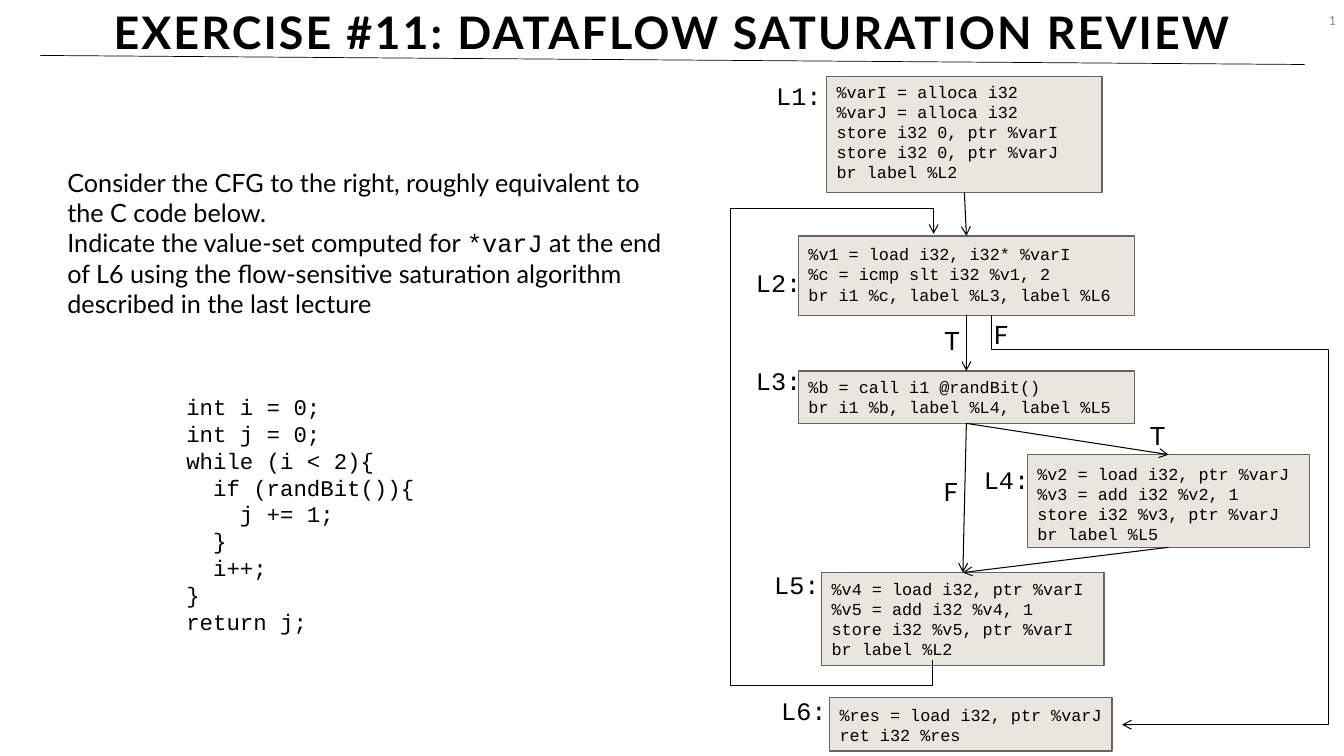
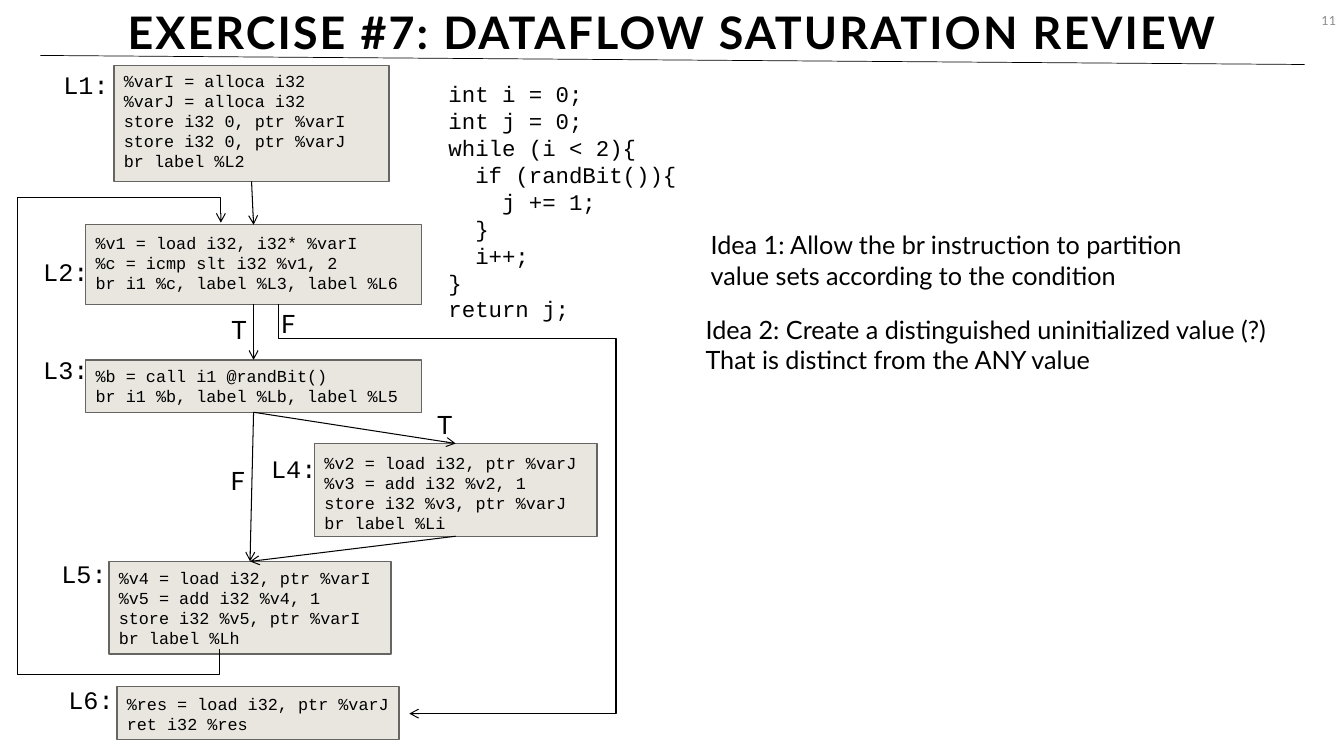
from dataclasses import dataclass

from lxml import etree
from pptx import Presentation
from pptx.dml.color import RGBColor
from pptx.enum.shapes import MSO_CONNECTOR, MSO_SHAPE
from pptx.enum.text import MSO_ANCHOR, MSO_AUTO_SIZE, PP_ALIGN
from pptx.oxml.ns import qn
from pptx.util import Inches, Pt

COLORS = {"ink": "000000", "number": "8C8C8C", "block": "E9E6DF", "edge": "666562"}
BODY, MONO = "Lato", "Courier New"
TOP, BOTTOM = 0, 2

C_CODE = [
    "int i = 0;",
    "int j = 0;",
    "while (i < 2){",
    "  if (randBit()){",
    "    j += 1;",
    "  }",
    "  i++;",
    "}",
    "return j;",
]


@dataclass(frozen=True)
class Block:
    """A basic block with its label; drop is the extra space above the code."""
    name: str
    left: float
    top: float
    width: float
    height: float
    label_left: float
    label_top: float
    drop: float
    code: tuple[str, ...]


@dataclass(frozen=True)
class Branch:
    """The T or F mark beside an edge."""
    text: str
    left: float
    top: float


@dataclass(frozen=True)
class Elbow:
    """A bent arrow; bends holds the levels it turns at: y, x, y, ..."""
    start: tuple[float, float]
    end: tuple[float, float]
    bends: tuple[float, ...]
    rotation: int


BLOCKS = [
    Block("L1", 8.2, 0.76, 2.73, 1.15, 7.6, 0.75, 0,
          ("%varI = alloca i32", "%varJ = alloca i32", "store i32 0, ptr %varI",
           "store i32 0, ptr %varJ", "br label %L2")),
    Block("L2", 7.92, 2.34, 3.33, 0.79, 7.4, 2.6, 0.03,
          ("%v1 = load i32, i32* %varI", "%c = icmp slt i32 %v1, 2",
           "br i1 %c, label %L3, label %L6")),
    Block("L3", 7.92, 3.68, 3.33, 0.52, 7.4, 3.58, 0.01,
          ("%b = call i1 @randBit()", "br i1 %b, label %{L3}, label %L5")),
    Block("L4", 10.19, 4.51, 2.8, 0.92, 9.66, 4.56, 0.04,
          ("%v2 = load i32, ptr %varJ", "%v3 = add i32 %v2, 1",
           "store i32 %v3, ptr %varJ", "br label %{L4}")),
    Block("L5", 8.15, 5.68, 2.8, 0.92, 7.58, 5.6, 0.01,
          ("%v4 = load i32, ptr %varI", "%v5 = add i32 %v4, 1",
           "store i32 %v5, ptr %varI", "br label %{L5}")),
    Block("L6", 8.23, 6.92, 2.8, 0.53, 7.65, 6.85, 0.02,
          ("%res = load i32, ptr %varJ", "ret i32 %res")),
]
EDGES = [("L1", "L2"), ("L2", "L3"), ("L3", "L5"), ("L3", "L4"), ("L4", "L5")]
ELBOWS = [
    Elbow((9.83, 3.13), (11.13, 7.19), (3.47, 13.18), 270),
    Elbow((9.25, 6.55), (9.26, 2.32), (6.8, 7.21, 2.07), 90),
]
BRANCHES = [Branch("F", 9.26, 4.68), Branch("T", 9.27, 3.18),
            Branch("T", 11.31, 4.12), Branch("F", 9.76, 3.12)]


def color(name: str) -> RGBColor:
    return RGBColor.from_string(COLORS[name])


# Text
def write(frame, paragraphs, *, size: float = 18, font: str = BODY, ink: str = "ink",
          bold: bool = False, align=PP_ALIGN.LEFT, anchor=MSO_ANCHOR.TOP,
          wrap: bool = True, auto_size=MSO_AUTO_SIZE.NONE,
          line_spacing: float | None = None, tracking: float = 0) -> None:
    """Fill a frame; a paragraph is a string or a list of (text, font) spans."""
    frame.word_wrap = wrap
    frame.auto_size = auto_size
    frame.vertical_anchor = anchor
    for index, content in enumerate(paragraphs):
        para = frame.add_paragraph() if index else frame.paragraphs[0]
        para.alignment = align
        if line_spacing:
            para.line_spacing = line_spacing
        spans = [(content, font)] if isinstance(content, str) else content
        for text, span_font in spans:
            span = para.add_run()
            span.text = text
            span.font.name = span_font
            span.font.size = Pt(size)
            span.font.bold = bold
            span.font.color.rgb = color(ink)
            if tracking:
                span._r.get_or_add_rPr().set("spc", str(round(tracking * 100)))


def add_text(page, left: float, top: float, width: float, height: float,
             paragraphs, **text_format) -> None:
    box = page.shapes.add_textbox(Inches(left), Inches(top), Inches(width), Inches(height))
    text_format.setdefault("auto_size", MSO_AUTO_SIZE.SHAPE_TO_FIT_TEXT)
    write(box.text_frame, paragraphs, **text_format)


# Lines
def add_line(page, start: tuple[float, float], end: tuple[float, float], *,
             kind=MSO_CONNECTOR.STRAIGHT, weight: float = 0.75, arrow: bool = True):
    line = page.shapes.add_connector(kind, *map(Inches, (*start, *end)))
    line.line.color.rgb = color("ink")
    line.line.width = Pt(weight)
    properties = line.element.spPr
    if arrow:
        etree.SubElement(properties.find(qn("a:ln")), qn("a:tailEnd"), type="arrow")
    etree.SubElement(properties, qn("a:effectLst"))
    return line


def add_elbow(page, elbow: Elbow, dx: float, dy: float) -> None:
    """Draw a bent arrow that leaves its start vertically."""
    (x0, y0), (x1, y1) = elbow.start, elbow.end
    line = add_line(page, (x0 + dx, y0 + dy), (x1 + dx, y1 + dy), kind=MSO_CONNECTOR.ELBOW)
    # The frame is given as it lies before the quarter turn
    width, height = abs(y1 - y0), abs(x1 - x0)
    line.left = Inches((x0 + x1 - width) / 2 + dx)
    line.top = Inches((y0 + y1 - height) / 2 + dy)
    line.width, line.height = Inches(width), Inches(height)
    clockwise = elbow.rotation == 90
    transform = line.element.spPr.find(qn("a:xfrm"))
    transform.set("rot", str(elbow.rotation * 60000))
    transform.set("flipH", str(int((y1 < y0) == clockwise)))
    transform.set("flipV", str(int((x1 > x0) == clockwise)))
    # Each bend is a share of the way from start to end
    geometry = line.element.spPr.find(qn("a:prstGeom"))
    geometry.set("prst", f"bentConnector{len(elbow.bends) + 2}")
    guides = geometry.find(qn("a:avLst"))
    if guides is None:
        guides = etree.SubElement(geometry, qn("a:avLst"))
    for index, level in enumerate(elbow.bends):
        share = (level - x0) / (x1 - x0) if index % 2 else (level - y0) / (y1 - y0)
        etree.SubElement(guides, qn("a:gd"), name=f"adj{index + 1}",
                         fmla=f"val {round(share * 100000)}")


# Control flow graph
def add_block(page, block: Block, targets: dict[str, str], dx: float, dy: float):
    shape = page.shapes.add_shape(
        MSO_SHAPE.RECTANGLE, Inches(block.left + dx), Inches(block.top + dy),
        Inches(block.width), Inches(block.height))
    shape.shadow.inherit = False
    shape.fill.solid()
    shape.fill.fore_color.rgb = color("block")
    shape.line.color.rgb = color("edge")
    shape.line.width = Pt(1)
    frame = shape.text_frame
    frame.margin_top = Inches(0.05 + block.drop)
    frame.margin_right = frame.margin_bottom = 0
    write(frame, [code.format(**targets) for code in block.code], size=12, font=MONO)
    add_text(page, block.label_left + dx, block.label_top + dy, 0.74, 0.4,
             [f"{block.name}:"], font=MONO)
    return shape


def add_graph(page, targets: dict[str, str], dx: float = 0, dy: float = 0) -> None:
    shapes = {block.name: add_block(page, block, targets, dx, dy) for block in BLOCKS}
    for source, target in EDGES:
        line = add_line(page, (0, 0), (1, 1))
        line.begin_connect(shapes[source], BOTTOM)
        line.end_connect(shapes[target], TOP)
    for elbow in ELBOWS:
        add_elbow(page, elbow, dx, dy)
    for branch in BRANCHES:
        add_text(page, branch.left + dx, branch.top + dy, 0.33, 0.4,
                 [branch.text], wrap=False)


def add_c_code(page, left: float, top: float) -> None:
    add_text(page, left, top, 2.5, 2.52, C_CODE, size=16, font=MONO, wrap=False)


# Shared page frame
def add_page(deck, title: str, number: str):
    page = deck.slides.add_slide(deck.slide_layouts[5])
    heading = page.shapes.title
    heading.left, heading.top = Inches(0), Inches(0.03)
    heading.width, heading.height = Inches(13.33), Inches(0.61)
    write(heading.text_frame, [title], size=32, bold=True, align=PP_ALIGN.CENTER,
          anchor=MSO_ANCHOR.BOTTOM, line_spacing=0.9, tracking=1.5)
    add_text(page, 12.64, 0, 0.71, 0.4, [number], size=9, ink="number",
             align=PP_ALIGN.RIGHT, anchor=MSO_ANCHOR.MIDDLE, auto_size=MSO_AUTO_SIZE.NONE)
    add_line(page, (0.4, 0.55), (12.94, 0.64), weight=0.5, arrow=False)
    return page


def build_question(deck) -> None:
    page = add_page(deck, "EXERCISE #11: DATAFLOW SATURATION REVIEW", "1")
    add_c_code(page, 1.75, 3.85)
    add_graph(page, {"L3": "L4", "L4": "L5", "L5": "L2"})
    add_text(page, 0.57, 1.61, 6.1, 1.62, [
        "Consider the CFG to the right, roughly equivalent to the C code below.",
        [("Indicate the value-set computed for ", BODY), ("*varJ", MONO),
         (" at the end of L6 using the flow-sensitive saturation algorithm "
          "described in the last lecture", BODY)],
    ])


def build_ideas(deck) -> None:
    page = add_page(deck, "EXERCISE #7: DATAFLOW SATURATION REVIEW", "11")
    add_graph(page, {"L3": "Lb", "L4": "Li", "L5": "Lh"}, dx=-7.07, dy=-0.11)
    add_c_code(page, 4.35, 0.75)
    add_text(page, 6.95, 2.23, 4.92, 0.71,
             ["Idea 1: Allow the br instruction to partition",
              "value sets according to the condition"], wrap=False)
    add_text(page, 6.9, 3.07, 5.86, 0.71,
             ["Idea 2: Create a distinguished uninitialized value (?)",
              "That is distinct from the ANY value"], wrap=False)


def main() -> None:
    deck = Presentation()
    deck.slide_width, deck.slide_height = Inches(13.33), Inches(7.5)
    build_question(deck)
    build_ideas(deck)
    deck.save("out.pptx")


if __name__ == "__main__":
    main()
